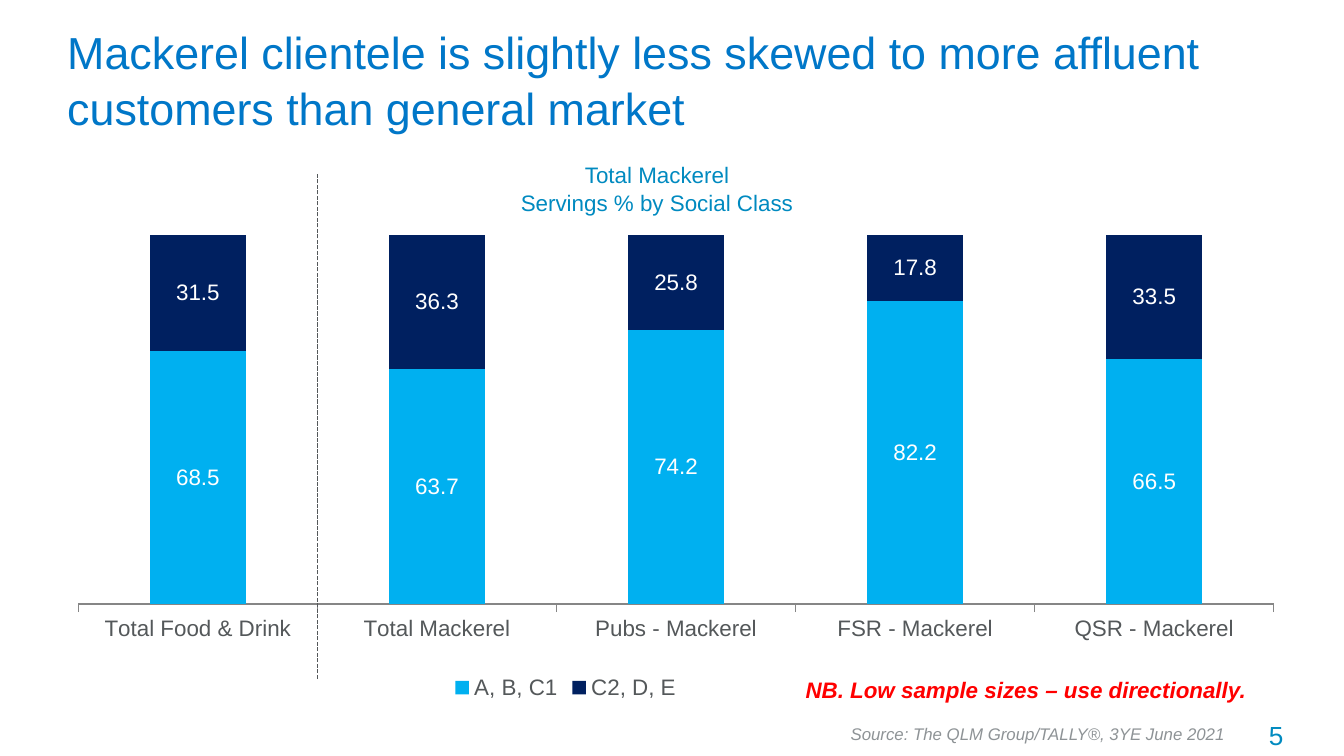
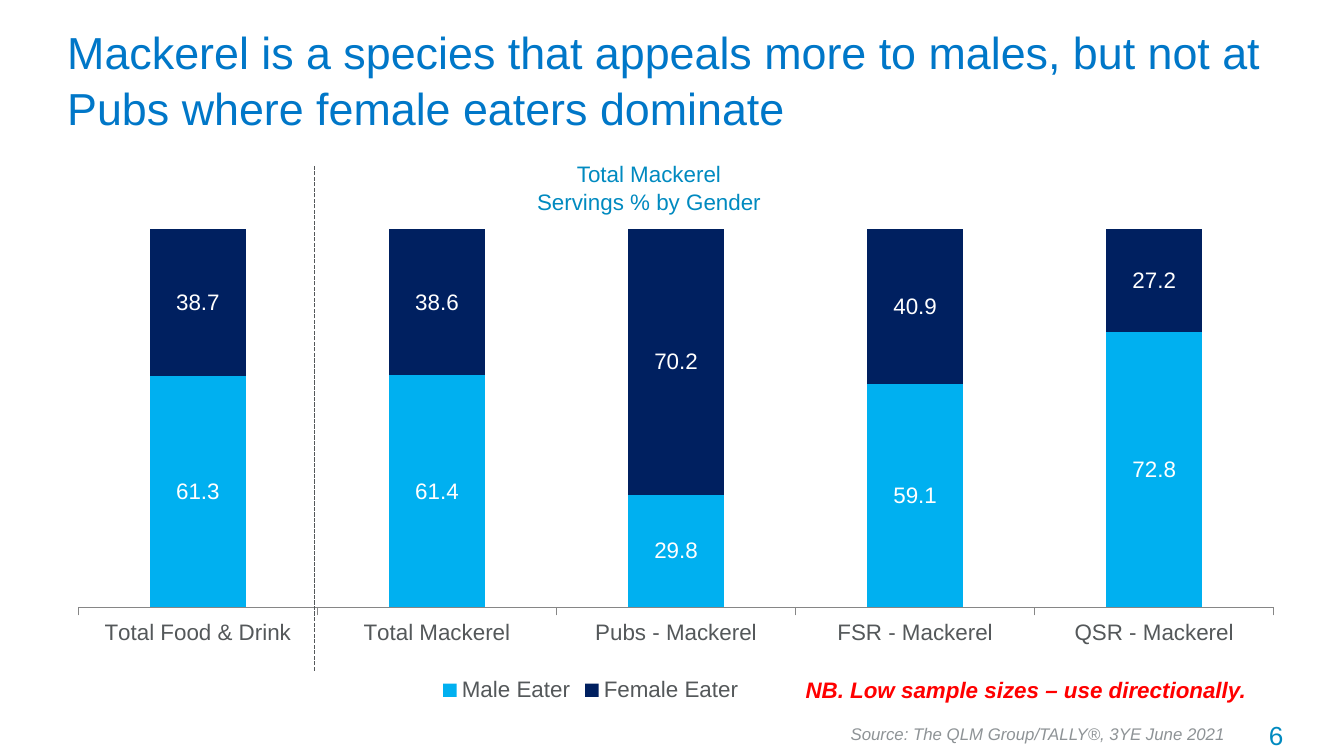
from lxml import etree
from pptx import Presentation
from pptx.chart.data import CategoryChartData
from pptx.dml.color import RGBColor
from pptx.enum import chart as ch, dml, shapes, text
from pptx.oxml.ns import qn
from pptx.util import Pt

TITLE_BLUE = RGBColor(0x00, 0x77, 0xC8)
TEAL = RGBColor(0x00, 0x8A, 0xC0)
SKY = RGBColor(0x00, 0xB0, 0xF0)
NAVY = RGBColor(0x00, 0x20, 0x60)
SLATE = RGBColor(0x54, 0x58, 0x5A)
GREY = RGBColor(0x8E, 0x93, 0x96)
AXIS_GREY = RGBColor(0x86, 0x86, 0x86)
RED = RGBColor(0xFF, 0x00, 0x00)
WHITE = RGBColor(0xFF, 0xFF, 0xFF)

LEFT, WIDTH = 28.8, 660.24
CATEGORIES = ["Total Food & Drink", "Total Mackerel", "Pubs - Mackerel",
              "FSR - Mackerel", "QSR - Mackerel"]
WARNING = "NB. Low sample sizes – use directionally."
SOURCE = "Source: The QLM Group/TALLY®, 3YE June 2021"

SLIDES = [
    dict(number=5,
         title="Mackerel clientele is slightly less skewed to more affluent "
               "customers than general market",
         heading=["Total Mackerel", "Servings % by Social Class"],
         heading_box=(271.4, 82, 161.3, 36),
         series={"A, B, C1": [68.5, 63.7, 74.2, 82.2, 66.5],
                 "C2, D, E": [31.5, 36.3, 25.8, 17.8, 33.5]},
         chart_box=(LEFT, 126, WIDTH, 253.5),
         plot=dict(x=0.02, y=0, w=0.97, h=0.78),
         legend=dict(x=0.32, y=0.92),
         divider=(170, 93, 363.6)),
    dict(number=6,
         title="Mackerel is a species that appeals more to males, but not at "
               "Pubs where female eaters dominate",
         heading=["Total Mackerel", "Servings % by Gender"],
         heading_box=(280, 81.4, 135.4, 36),
         series={"Male Eater": [61.3, 61.4, 29.8, 59.1, 72.8],
                 "Female Eater": [38.7, 38.6, 70.2, 40.9, 27.2]},
         chart_box=(LEFT, 109.5, WIDTH, 270),
         plot=dict(x=0.02, y=0.05, w=0.97, h=0.75),
         legend=dict(x=0.31, y=0.93),
         divider=(168.5, 88.6, 359.3)),
]


def set_layout(parent, index, inner=False, **fractions):
    """Place a chart part by fractions of the chart's size."""
    for old in parent.findall(qn("c:layout")):
        parent.remove(old)
    layout = etree.Element(qn("c:layout"))
    manual = etree.SubElement(layout, qn("c:manualLayout"))
    settings = [("layoutTarget", "inner")] if inner else []
    settings += [("xMode", "edge"), ("yMode", "edge"), *fractions.items()]
    for tag, value in settings:
        etree.SubElement(manual, qn(f"c:{tag}")).set("val", str(value))
    parent.insert(index, layout)


class Deck:
    FONT = "Arial"
    LINE_SPACING = 1.05

    def __init__(self):
        self.prs = Presentation()
        self.prs.slide_width, self.prs.slide_height = Pt(720), Pt(405)
        self.slide = None

    def add_slide(self, title):
        self.slide = self.prs.slides.add_slide(self.prs.slide_layouts[5])
        sp = self.slide.shapes.title
        sp.left, sp.top, sp.width, sp.height = map(Pt, (LEFT, 16.5, WIDTH, 51))
        sp.text_frame.vertical_anchor = text.MSO_ANCHOR.MIDDLE
        self.fill_text(sp.text_frame, [title], 24, TITLE_BLUE)

    def fill_text(self, tf, lines, size, color, align=text.PP_ALIGN.LEFT,
                  bold=False, italic=False):
        tf.auto_size = text.MSO_AUTO_SIZE.NONE
        for i, line in enumerate(lines):
            p = tf.add_paragraph() if i else tf.paragraphs[0]
            p.alignment, p.line_spacing = align, self.LINE_SPACING
            r = p.add_run()
            r.text = line
            f = r.font
            f.name, f.size, f.bold, f.italic = self.FONT, Pt(size), bold, italic
            f.color.rgb = color

    def text_box(self, box, lines, size, color, wrap=True, **style):
        tf = self.slide.shapes.add_textbox(*map(Pt, box)).text_frame
        tf.word_wrap = wrap
        self.fill_text(tf, lines, size, color, **style)

    def divider(self, x, top, bottom):
        line = self.slide.shapes.add_connector(
            shapes.MSO_CONNECTOR.STRAIGHT, Pt(x), Pt(bottom), Pt(x), Pt(top))
        line.line.color.rgb = SLATE
        line.line.width = Pt(0.75)
        line.line.dash_style = dml.MSO_LINE.SQUARE_DOT
        etree.SubElement(line._element.spPr, qn("a:effectLst"))

    def stacked_chart(self, box, series, plot_area, legend_at):
        data = CategoryChartData()
        data.categories = CATEGORIES
        for name, values in series.items():
            data.add_series(name, values)
        chart = self.slide.shapes.add_chart(
            ch.XL_CHART_TYPE.COLUMN_STACKED_100, *map(Pt, box), data).chart
        chart.has_title = False
        chart.font.name, chart.font.size = self.FONT, Pt(12)
        chart.font.color.rgb = SLATE

        chart.value_axis.visible = False
        chart.value_axis.has_major_gridlines = False
        axis = chart.category_axis
        axis.major_tick_mark = ch.XL_TICK_MARK.OUTSIDE
        axis.format.line.color.rgb = AXIS_GREY
        axis.format.line.width = Pt(0.75)

        plot = chart.plots[0]
        plot.gap_width, plot.overlap, plot.vary_by_categories = 150, 100, False
        for s, color in zip(plot.series, (SKY, NAVY)):
            s.format.fill.solid()
            s.format.fill.fore_color.rgb = color
            labels = s.data_labels
            labels.show_value = True
            labels.number_format = "#,##0.0"
            labels.number_format_is_linked = False
            labels.position = ch.XL_LABEL_POSITION.CENTER
            labels.font.name, labels.font.size = self.FONT, Pt(12)
            labels.font.color.rgb = WHITE

        chart.has_legend = True
        chart.legend.position = ch.XL_LEGEND_POSITION.BOTTOM
        chart.legend.include_in_layout = False
        set_layout(chart.legend._element, 1, **legend_at)
        plot_element = chart._chartSpace.find(".//" + qn("c:plotArea"))
        set_layout(plot_element, 0, inner=True, **plot_area)

    def footer(self, number):
        self.text_box((637, 381, 57.6, 24.5), [str(number)], 14, TEAL,
                      align=text.PP_ALIGN.RIGHT)
        self.text_box((410.4, 358, 278.6, 21.6), [WARNING], 12, RED,
                      align=text.PP_ALIGN.CENTER, bold=True, italic=True)
        self.text_box((448.6, 383.8, 227.5, 18), [SOURCE], 9, GREY, italic=True)


def main():
    deck = Deck()
    for page in SLIDES:
        deck.add_slide(page["title"])
        deck.stacked_chart(page["chart_box"], page["series"], page["plot"],
                           page["legend"])
        deck.text_box(page["heading_box"], page["heading"], 12, TEAL,
                      wrap=False, align=text.PP_ALIGN.CENTER)
        deck.divider(*page["divider"])
        deck.footer(page["number"])
    deck.prs.save("out.pptx")


if __name__ == "__main__":
    main()
